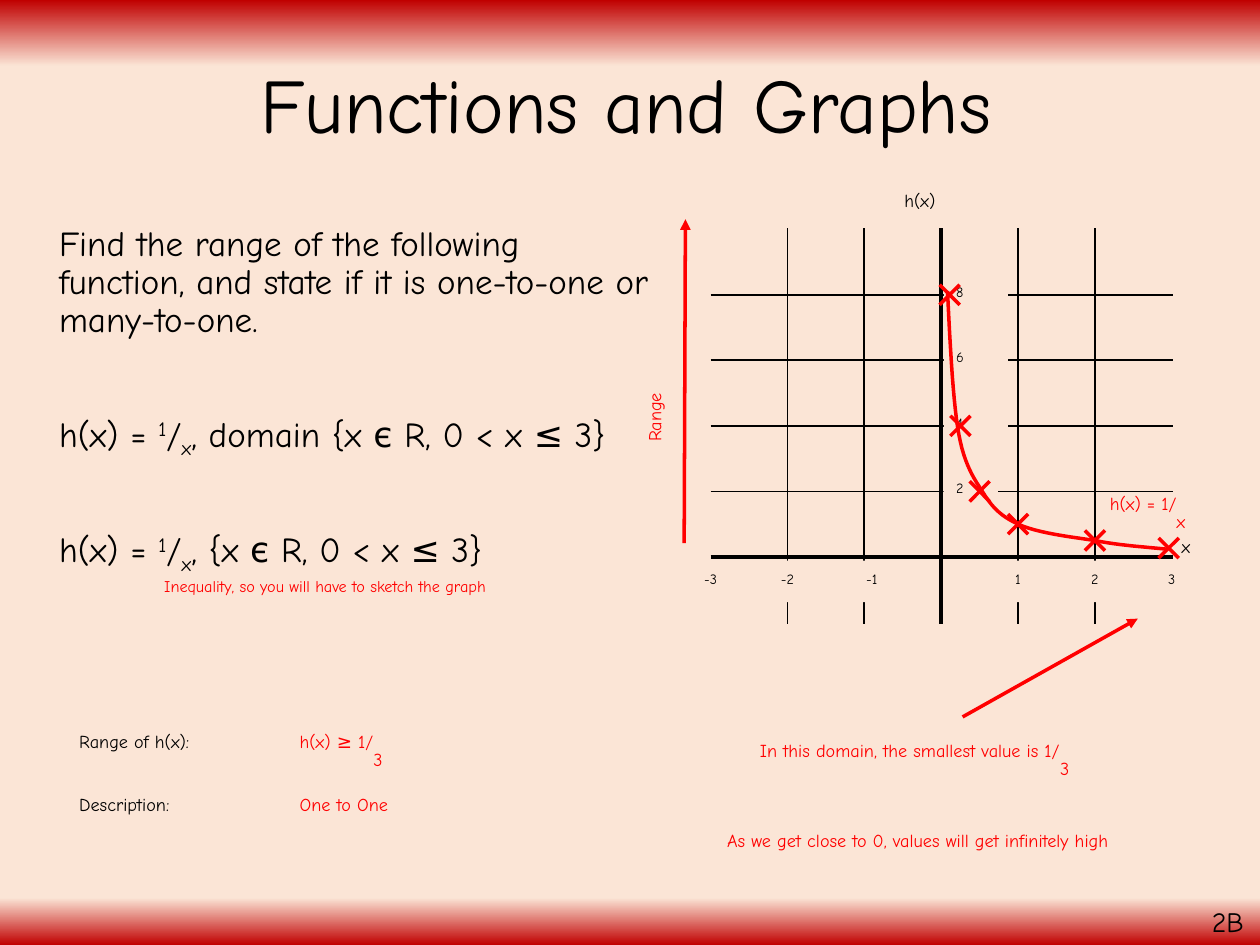
"""Build a slide on the range of a reciprocal function, with its graph."""
from copy import deepcopy

from pptx import Presentation
from pptx.dml.color import RGBColor
from pptx.enum.shapes import MSO_CONNECTOR as Connector, MSO_SHAPE as Shape
from pptx.enum.text import MSO_ANCHOR as Anchor, PP_ALIGN as Align
from pptx.oxml.ns import qn
from pptx.oxml.xmlchemy import OxmlElement
from pptx.util import Inches, Pt

COLORS = {"ink": "000000", "answer": "FF0000", "edge": "C00000", "paper": "FBE5D6"}
FONT = "Comic Neue"
BACKGROUND_STOPS = [(0, "edge"), (7, "paper"), (95, "paper"), (100, "edge")]
RAISED, LEVEL, LOWERED = 30, 0, -25

TITLE = "Functions and Graphs"
QUESTION = [
    [("Find the range of the following function, and state if it is "
      "one-to-one or many-to-one.", LEVEL)],
    [("h(x) = ", LEVEL), ("1", RAISED), ("/", LEVEL), ("x", LOWERED),
     (", domain {x є R, 0 < x ≤ 3}", LEVEL)],
    [("h(x) = ", LEVEL), ("1", RAISED), ("/", LEVEL), ("x", LOWERED),
     (", {x є R, 0 < x ≤ 3}", LEVEL)],
]
QUESTION_GAP = 41.5
NOTES = [
    ("Range of h(x):", "", (0.53, 5.72, 1.94, 0.4), "ink", 18, Align.LEFT, 0),
    ("h(x) ≥ 1/", "3", (2.28, 5.72, 1.58, 0.4), "answer", 18, Align.LEFT, 0),
    ("Description:", "", (0.53, 6.22, 1.83, 0.4), "ink", 18, Align.LEFT, 0),
    ("One to One", "", (2.28, 6.22, 1.58, 0.4), "answer", 18, Align.LEFT, 0),
    ("Inequality, so you will have to sketch the graph", "",
     (0.58, 4.5, 4, 0.64), "answer", 16, Align.CENTER, 0),
    ("x", "", (9.28, 4.17, 0.36, 0.4), "ink", 18, Align.LEFT, 0),
    ("h(x)", "", (7.08, 1.42, 0.84, 0.4), "ink", 18, Align.LEFT, 0),
    ("Range", "", (4.73, 2.91, 0.99, 0.4), "answer", 18, Align.LEFT, 270),
    ("In this domain, the smallest value is 1/", "3",
     (5.78, 5.79, 2.96, 0.7), "answer", 18, Align.CENTER, 0),
    ("As we get close to 0, values will get infinitely high", "",
     (5.5, 6.5, 3.57, 0.7), "answer", 18, Align.CENTER, 0),
    ("h(x) = 1/", "x", (8.71, 3.83, 1.3, 0.4), "answer", 18, Align.LEFT, 0),
]
PAGE_CODE = ("2B", (9.52, 7.13, 0.56, 0.37))

ORIGIN = (7.47, 4.42)
UNIT = (0.61, 0.26)
GRID_LEFT, GRID_RIGHT, GRID_TOP, GRID_BOTTOM = 5.64, 9.31, 1.81, 4.95
X_LABELS = [(-3, 0.45), (-2, 0.42), (-1, 0.49), (1, 0.33), (2, 0.33), (3, 0.33)]
X_SHIFT = {-1: 0.06}
Y_LABELS = [(2, 0.43), (4, 0.51), (6, 0.51), (8, 0.51)]
LABEL_HEIGHT = 0.33
MARKS = [(1, 1), (2, 0.5), (2.96, 0.27), (0.5, 2), (0.11, 8), (0.25, 4)]
MARK_REACH = 0.08
CURVE_START = (9.27, 4.36)
CURVE_BENDS = [
    ((9.08, 4.34), (8.89, 4.33), (8.69, 4.29)),
    ((8.49, 4.26), (8.23, 4.23), (8.08, 4.16)),
    ((7.93, 4.09), (7.87, 4.02), (7.79, 3.89)),
    ((7.71, 3.77), (7.64, 3.65), (7.60, 3.39)),
    ((7.56, 3.12), (7.54, 2.72), (7.52, 2.31)),
]
CURVE_STEPS = 12
ARROWS = [((5.43, 4.31), (5.44, 1.74)), ((7.64, 5.69), (9.03, 4.91))]


def color(name):
    return RGBColor.from_string(COLORS[name])


def place(shape, box):
    for name, value in zip(("left", "top", "width", "height"), box):
        setattr(shape, name, Inches(value))


def write(paragraph, runs, size, ink="ink", **layout):
    for name, value in layout.items():
        setattr(paragraph, name, value)
    for text, baseline in runs:
        run = paragraph.add_run()
        run.text = text
        for name, value in {"name": FONT, "size": Pt(size)}.items():
            setattr(run.font, name, value)
        run.font.color.rgb = color(ink)
        if baseline:
            run.font._element.set("baseline", str(baseline * 1000))


def add_text(slide, box, runs, size, ink="ink", rotation=0, **layout):
    shape = slide.shapes.add_textbox(*map(Inches, box))
    shape.rotation = rotation
    shape.text_frame.word_wrap = True
    write(shape.text_frame.paragraphs[0], runs, size, ink, **layout)
    return shape


def add_line(shapes, start, end, width, ink="ink", arrow=False):
    line = shapes.add_connector(Connector.STRAIGHT, *map(Inches, start + end))
    line.line.width = Pt(width)
    line.line.color.rgb = color(ink)
    if arrow:
        head = OxmlElement("a:tailEnd")
        head.set("type", "triangle")
        line.line._get_or_add_ln().append(head)
    line._element.spPr.append(OxmlElement("a:effectLst"))


def add_tick(slide, box, value, alignment):
    tick = slide.shapes.add_shape(Shape.RECTANGLE, *map(Inches, box))
    tick.shadow.inherit = False
    tick.fill.solid()
    tick.fill.fore_color.rgb = color("paper")
    tick.line.fill.background()
    tick.text_frame.vertical_anchor = Anchor.TOP
    write(tick.text_frame.paragraphs[0], [(str(value), RAISED)], 14, alignment=alignment)


def graph_point(x, y):
    return ORIGIN[0] + UNIT[0] * x, ORIGIN[1] - UNIT[1] * y


def paint_background(slide):
    fill = slide.background.fill
    fill.gradient()
    fill.gradient_angle = 270
    stop_list = slide._element.find(".//" + qn("a:gsLst"))
    while len(stop_list) < len(BACKGROUND_STOPS):
        stop_list.append(deepcopy(stop_list[0]))
    for stop, (position, name) in zip(fill.gradient_stops, BACKGROUND_STOPS):
        stop.position = position / 100
        stop.color.rgb = color(name)


def add_grid(slide):
    for value in (8, 6, 4, 2, 0):
        y = graph_point(0, value)[1]
        add_line(slide.shapes, (GRID_LEFT, y), (GRID_RIGHT, y), 1 if value else 2.5)
    for value in range(-2, 3):
        x = graph_point(value, 0)[0]
        add_line(slide.shapes, (x, GRID_TOP), (x, GRID_BOTTOM), 1 if value else 2.5)
    for value, width in X_LABELS:
        left = graph_point(value, 0)[0] + X_SHIFT.get(value, 0) - width / 2
        add_tick(slide, (left, ORIGIN[1] + 0.03, width, LABEL_HEIGHT), value, Align.CENTER)
    for value, width in Y_LABELS:
        top = graph_point(0, value)[1] - LABEL_HEIGHT / 2
        add_tick(slide, (ORIGIN[0] + 0.02, top, width, LABEL_HEIGHT), value, Align.LEFT)


def add_curve(slide):
    points, start = [], CURVE_START
    for bend in CURVE_BENDS:
        for step in range(1, CURVE_STEPS + 1):
            t = step / CURVE_STEPS
            weights = ((1 - t) ** 3, 3 * t * (1 - t) ** 2, 3 * t * t * (1 - t), t ** 3)
            points.append(tuple(
                Inches(sum(w * p[axis] for w, p in zip(weights, (start, *bend))))
                for axis in (0, 1)))
        start = bend[-1]
    builder = slide.shapes.build_freeform(*map(Inches, CURVE_START))
    builder.add_line_segments(points, close=False)
    curve = builder.convert_to_shape()
    curve.shadow.inherit = False
    curve.fill.background()
    curve.line.width = Pt(2)
    curve.line.color.rgb = color("answer")


def add_marks(slide):
    for mark in MARKS:
        x, y = graph_point(*mark)
        cross = slide.shapes.add_group_shape()
        for rise in (MARK_REACH, -MARK_REACH):
            add_line(cross.shapes, (x - MARK_REACH, y - rise),
                     (x + MARK_REACH, y + rise), 2, "answer")


def main():
    presentation = Presentation()
    presentation.slide_width, presentation.slide_height = Inches(10), Inches(7.5)
    slide = presentation.slides.add_slide(presentation.slide_layouts[5])
    paint_background(slide)

    title = slide.shapes.title
    place(title, (0.66, 0.14, 8.62, 1.45))
    title.text_frame.vertical_anchor = Anchor.MIDDLE
    write(title.text_frame.paragraphs[0], [(TITLE, LEVEL)], 44,
          alignment=Align.CENTER, line_spacing=0.9)

    question = add_text(slide, (0.12, 1.75, 5.19, 4.95), QUESTION[0], 20, line_spacing=0.9)
    for runs in QUESTION[1:]:
        write(question.text_frame.add_paragraph(), runs, 20,
              line_spacing=0.9, space_before=Pt(QUESTION_GAP))
    for paragraph in question.text_frame.paragraphs:
        paragraph._p.get_or_add_pPr().set("marL", str(Inches(0.25)))

    add_grid(slide)
    add_curve(slide)
    add_marks(slide)
    for start, end in ARROWS:
        add_line(slide.shapes, start, end, 2, "answer", arrow=True)
    for text, lowered, box, ink, size, alignment, rotation in NOTES:
        runs = [(text, RAISED)] + ([(lowered, LOWERED)] if lowered else [])
        add_text(slide, box, runs, size, ink, rotation, alignment=alignment)
    code, box = PAGE_CODE
    add_text(slide, box, [(code, LEVEL)], 16)
    presentation.save("out.pptx")


if __name__ == "__main__":
    main()
